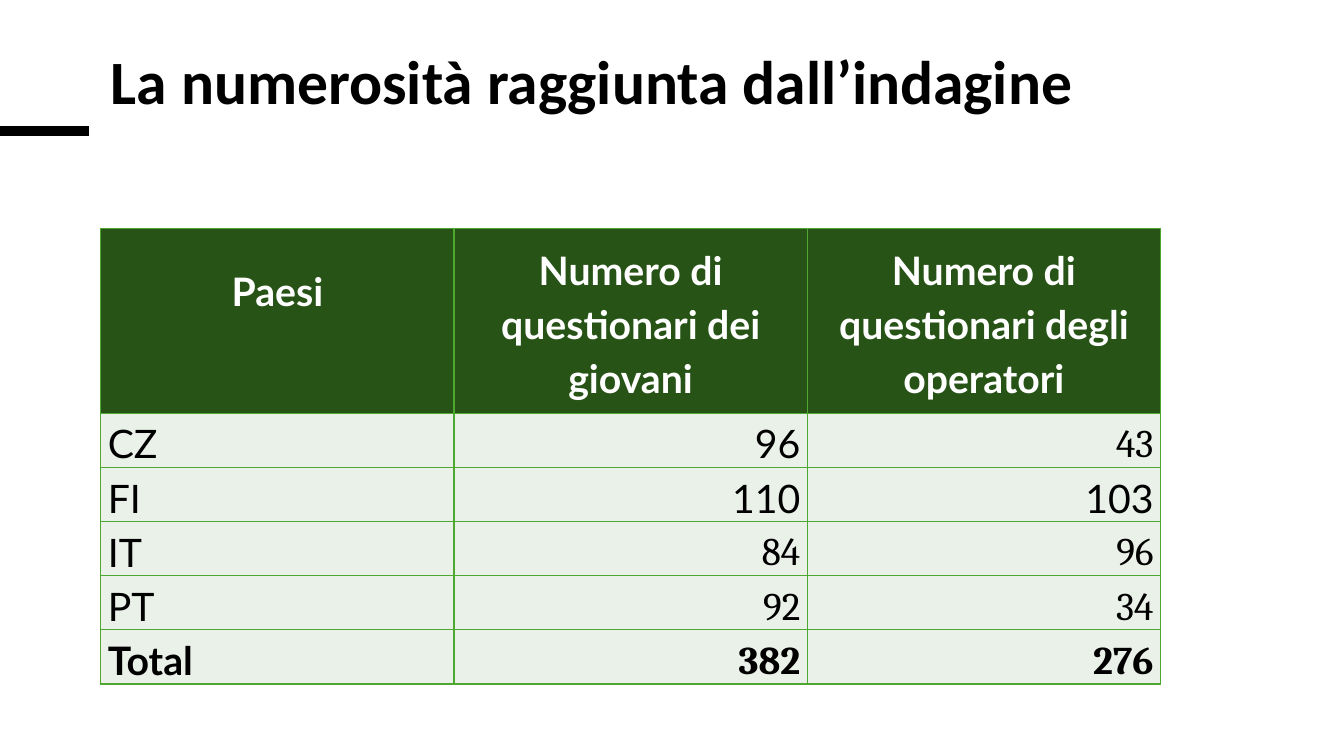
from lxml.etree import SubElement
from pptx import Presentation
from pptx.dml.color import RGBColor
from pptx.enum.shapes import MSO_CONNECTOR
from pptx.enum.text import MSO_ANCHOR, PP_ALIGN
from pptx.oxml.ns import qn
from pptx.util import Inches, Pt

BLACK, WHITE = "000000", "FFFFFF"
HEADER_GREEN, BODY_GREEN, BORDER_GREEN = "275317", "E9F1E8", "4EA72E"

HEADERS = ["Paesi", "Numero di questionari dei giovani",
           "Numero di questionari degli operatori"]
COUNTRIES = [("CZ", "96", "43"), ("FI", "110", "103"),
             ("IT", "84", "96"), ("PT", "92", "34"),
             ("Total", "382", "276")]
LATO_COUNTS = {"96": 1, "110": 1, "103": 2}  # count: its column


def color(hex_string):
    return RGBColor.from_string(hex_string)


def format_font(paragraph, name, size, hex_string, bold):
    for run in paragraph.runs:
        run.font.name = name
        run.font.size = Pt(size)
        run.font.bold = bold
        run.font.color.rgb = color(hex_string)


def add_title(slide, left, top, width, height):
    """Place the title and the rule that runs to it from the slide edge."""
    box = slide.shapes.add_textbox(Inches(left), Inches(top),
                                   Inches(width), Inches(height))
    frame = box.text_frame
    frame.word_wrap = True
    frame.vertical_anchor = MSO_ANCHOR.TOP
    frame.text = "La numerosità raggiunta dall’indagine"
    paragraph = frame.paragraphs[0]
    paragraph.line_spacing = 0.85
    format_font(paragraph, "Calibri", 44, BLACK, True)

    rule_y = Inches(top + 0.81)
    rule = slide.shapes.add_connector(MSO_CONNECTOR.STRAIGHT, 0, rule_y,
                                      Inches(left - 0.12), rule_y)
    rule.line.color.rgb = color(BLACK)
    rule.line.width = Pt(6.75)
    SubElement(rule._element.spPr, qn("a:effectLst"))


def add_borders(cell):
    properties = cell._tc.get_or_add_tcPr()
    for position, side in enumerate(("a:lnL", "a:lnR", "a:lnT", "a:lnB")):
        line = properties.makeelement(qn(side), {"w": str(Pt(1))})
        fill = SubElement(line, qn("a:solidFill"))
        SubElement(fill, qn("a:srgbClr"), val=BORDER_GREEN)
        properties.insert(position, line)


def fill_cell(cell, text, fill, anchor, alignment, font, text_color, bold):
    cell.fill.solid()
    cell.fill.fore_color.rgb = color(fill)
    add_borders(cell)
    cell.margin_left = cell.margin_right = Inches(0.07)
    cell.margin_top = cell.margin_bottom = 0
    cell.vertical_anchor = anchor
    cell.text_frame.text = text
    paragraph = cell.text_frame.paragraphs[0]
    paragraph.alignment = alignment
    paragraph.line_spacing = 1.15
    paragraph.space_after = Pt(8)
    format_font(paragraph, font, 28, text_color, bold)


def add_survey_table(slide, left, top, width, header_height, row_height):
    row_count, column_count = len(COUNTRIES) + 1, len(HEADERS)
    height = header_height + row_height * len(COUNTRIES)
    table = slide.shapes.add_table(row_count, column_count, Inches(left),
                                   Inches(top), Inches(width),
                                   Inches(height)).table
    table.horz_banding = False
    for column in table.columns:
        column.width = Inches(width / column_count)
    for index, row in enumerate(table.rows):
        row.height = Inches(row_height if index else header_height)

    for column, header in enumerate(HEADERS):
        fill_cell(table.cell(0, column), header, HEADER_GREEN,
                  MSO_ANCHOR.MIDDLE, PP_ALIGN.CENTER, "Lato", WHITE, True)
    table.cell(0, 0).margin_bottom = Inches(0.65)

    for row, values in enumerate(COUNTRIES, start=1):
        for column, value in enumerate(values):
            is_lato = column == 0 or (LATO_COUNTS.get(value) == column)
            fill_cell(table.cell(row, column), value, BODY_GREEN,
                      MSO_ANCHOR.BOTTOM,
                      PP_ALIGN.RIGHT if column else PP_ALIGN.JUSTIFY,
                      "Lato" if is_lato else "Cambria", BLACK,
                      values[0] == "Total")


def main():
    presentation = Presentation()
    presentation.slide_width = Inches(13.33)
    presentation.slide_height = Inches(7.5)
    slide = presentation.slides.add_slide(presentation.slide_layouts[6])
    add_title(slide, 1, 0.49, 10.85, 1.42)
    add_survey_table(slide, 1, 2.27, 10.51, 1.83, 0.44)
    presentation.save("out.pptx")


if __name__ == "__main__":
    main()
